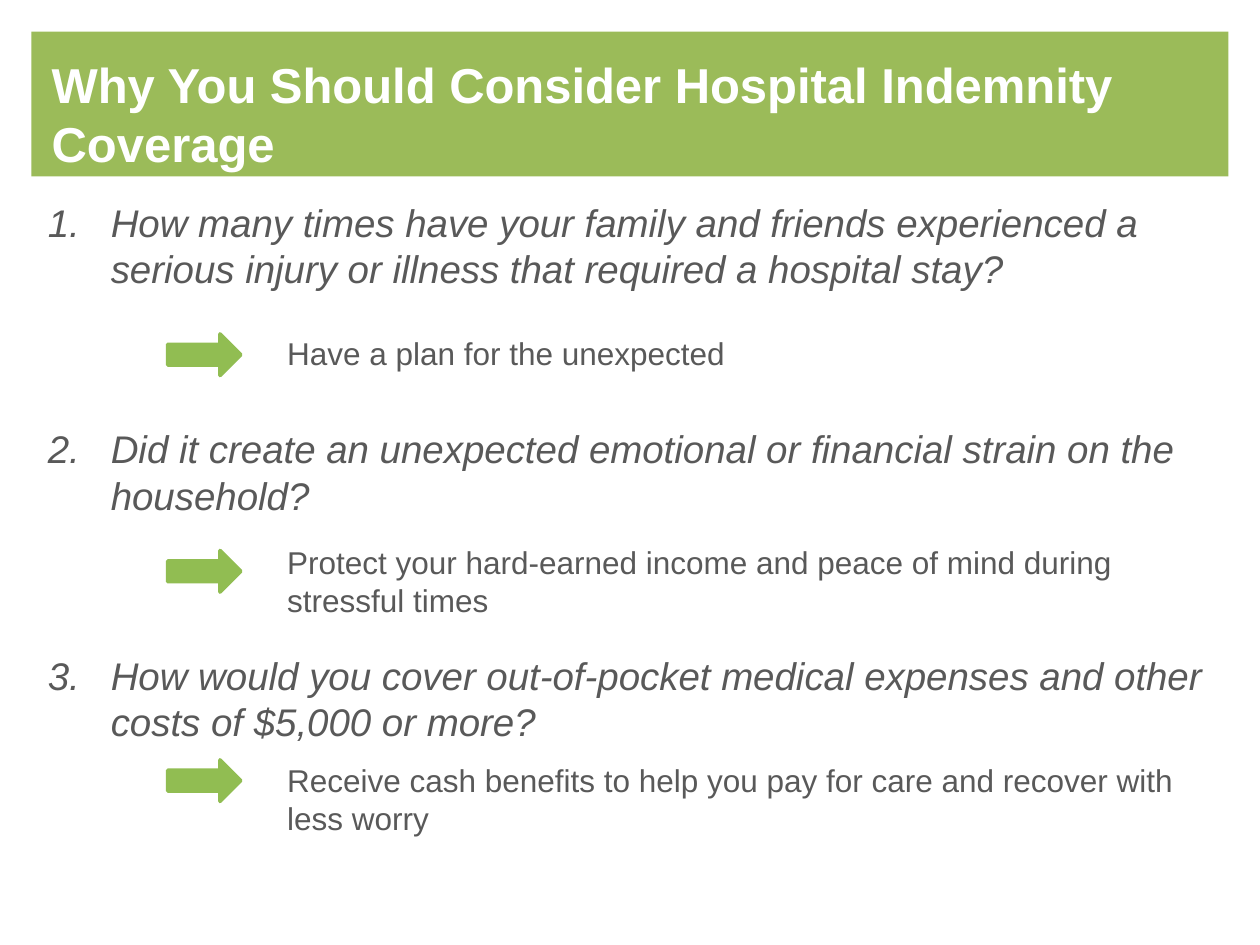
from dataclasses import dataclass

from lxml import etree
from pptx import Presentation
from pptx.dml.color import RGBColor
from pptx.enum import shapes, text
from pptx.oxml import ns
from pptx.util import Pt


@dataclass(frozen=True)
class Theme:
    font: str = "Arial"
    band: RGBColor = RGBColor(0x9B, 0xBB, 0x59)
    arrow: RGBColor = RGBColor(0x91, 0xBD, 0x52)
    ink: RGBColor = RGBColor(0x59, 0x59, 0x59)
    white: RGBColor = RGBColor(0xFF, 0xFF, 0xFF)
    head: int = 28
    ask: int = 22
    reply: int = 18


THEME = Theme()
TITLE = "Why You Should Consider Hospital Indemnity Coverage"
ASKS = [
    "How many times have your family and friends experienced a serious injury or illness that required a hospital stay?",
    "Did it create an unexpected emotional or financial strain on the household?",
    "How would you cover out-of-pocket medical expenses and other costs of $5,000 or more?",
]
# Reply text, text top, text width, text height, arrow top
REPLIES = [
    ("Have a plan for the unexpected", 187.2, 336.2, 29, 190.8),
    ("Protect your hard-earned income and peace of mind during stressful times",
     306.7, 502.6, 51, 314.6),
    ("Receive cash benefits to help you pay for care and recover with less worry",
     431.3, 551.5, 51, 434.2),
]


def place(shape, left, top, width, height):
    shape.left, shape.top = Pt(left), Pt(top)
    shape.width, shape.height = Pt(width), Pt(height)


def add_run(para, words, size, color, bold=False, italic=False):
    run = para.add_run()
    run.text = words
    font = run.font
    font.name, font.size = THEME.font, Pt(size)
    font.bold, font.italic = bold, italic
    font.color.rgb = color


def add_form(slide, kind, box, color):
    form = slide.shapes.add_shape(kind, *map(Pt, box))
    form.shadow.inherit = False
    form.fill.solid()
    form.fill.fore_color.rgb = color
    return form


def add_box(slide, box):
    frame = slide.shapes.add_textbox(*map(Pt, box)).text_frame
    frame.word_wrap = True
    return frame


def add_band(slide):
    band = add_form(slide, shapes.MSO_SHAPE.RECTANGLE, (18, 18, 684, 82.8), THEME.band)
    band.line.fill.background()
    slide.shapes.title.element.addprevious(band.element)


def set_title(slide):
    title = slide.shapes.title
    place(title, 15.1, 31, 653.8, 72)
    frame = title.text_frame
    frame.word_wrap = True
    frame.auto_size = text.MSO_AUTO_SIZE.NONE
    frame.vertical_anchor = text.MSO_ANCHOR.TOP
    frame.margin_left, frame.margin_top = Pt(14.4), 0
    frame.margin_right, frame.margin_bottom = 0, Pt(7.2)
    para = frame.paragraphs[0]
    para.alignment = text.PP_ALIGN.LEFT
    add_run(para, TITLE, THEME.head, THEME.white, bold=True)


def number(para, indent):
    """Give a paragraph an automatic number on a hanging indent."""
    props = para._p.get_or_add_pPr()
    props.set("marL", str(Pt(indent)))
    props.set("indent", str(-Pt(indent)))
    etree.SubElement(props, ns.qn("a:buFont"), typeface=THEME.font)
    etree.SubElement(props, ns.qn("a:buAutoNum"), type="arabicPeriod")


def add_asks(slide):
    frame = add_box(slide, (20.2, 110.2, 687.6, 372.2))
    for i, ask in enumerate(ASKS):
        para = frame.add_paragraph() if i else frame.paragraphs[0]
        number(para, 36)
        para.space_after = Pt(76.6)
        add_run(para, ask, THEME.ask, THEME.ink, italic=True)


def add_reply(slide, words, top, width, height, tip):
    arrow = add_form(slide, shapes.MSO_SHAPE.RIGHT_ARROW, (95.8, tip, 41.8, 23.8), THEME.arrow)
    arrow.line.color.rgb = THEME.arrow
    arrow.line.width = Pt(2)
    frame = add_box(slide, (157, top, width, height))
    add_run(frame.paragraphs[0], words, THEME.reply, THEME.ink)


def main():
    deck = Presentation()
    deck.slide_width, deck.slide_height = Pt(720), Pt(540)
    slide = deck.slides.add_slide(deck.slide_layouts[5])
    add_band(slide)
    set_title(slide)
    add_asks(slide)
    for reply in REPLIES:
        add_reply(slide, *reply)
    deck.save("out.pptx")


if __name__ == "__main__":
    main()
